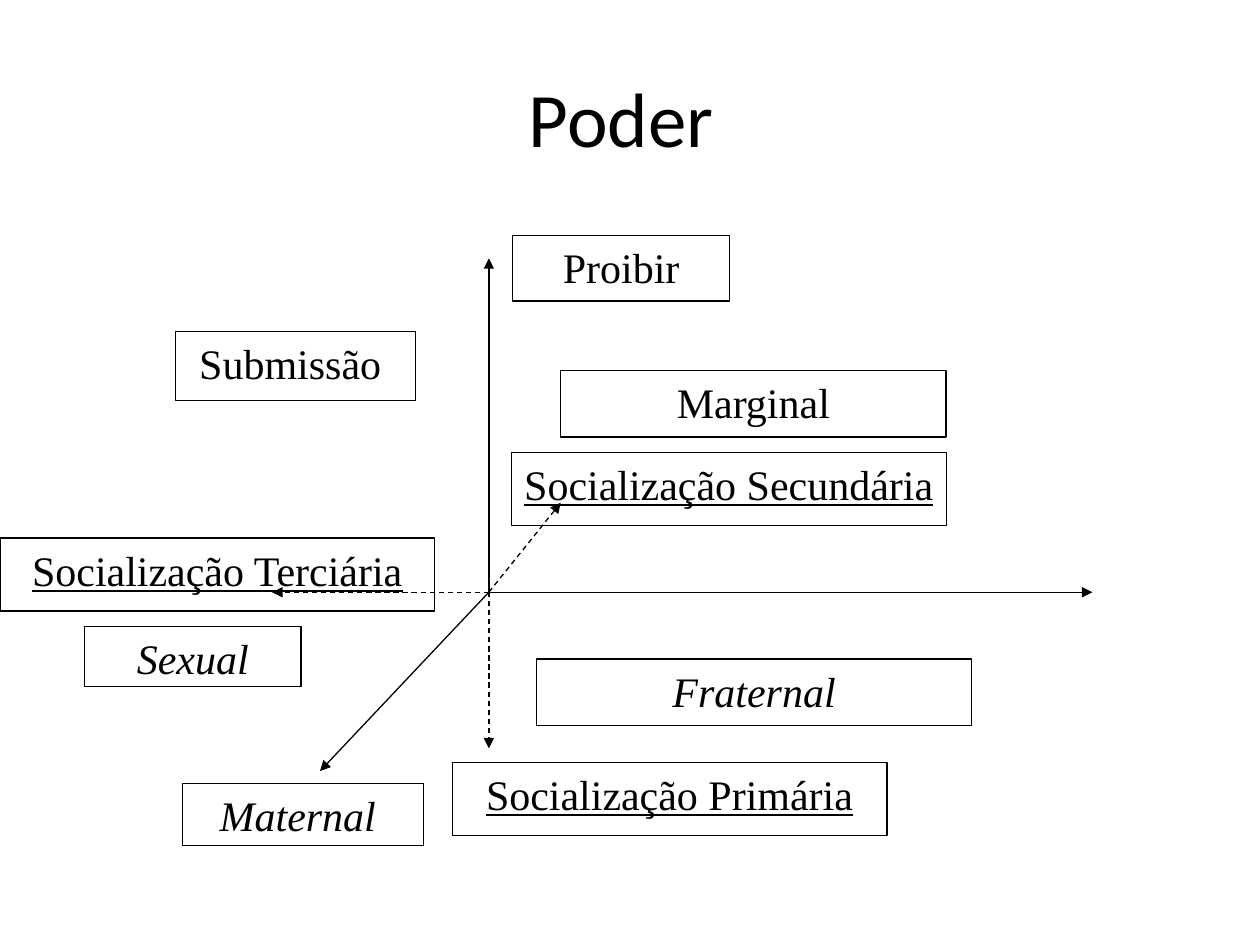
"""Build the "Poder" slide: six axes from one origin, with labelled boxes around them."""
from lxml.etree import SubElement
from pptx import Presentation
from pptx.dml.color import RGBColor
from pptx.enum.dml import MSO_LINE
from pptx.enum.shapes import MSO_CONNECTOR, MSO_SHAPE
from pptx.enum.text import MSO_ANCHOR, PP_ALIGN
from pptx.oxml.ns import qn
from pptx.util import Inches, Pt

BLACK = RGBColor(0, 0, 0)
WHITE = RGBColor(255, 255, 255)

deck = Presentation()
deck.slide_width, deck.slide_height = Inches(10), Inches(7.5)
COLUMN = deck.slide_width / 100
ROW = deck.slide_height / 75
slide = deck.slides.add_slide(deck.slide_layouts[6])


def cells(left, top, width, height):
    return [int(left * COLUMN), int(top * ROW), int(width * COLUMN), int(height * ROW)]


def write(holder, wording, font_name, size, anchor):
    frame = holder.text_frame
    frame.text = wording
    frame.word_wrap = False
    frame.vertical_anchor = anchor
    paragraph = frame.paragraphs[0]
    paragraph.alignment = PP_ALIGN.CENTER
    font = paragraph.runs[0].font
    font.name, font.size = font_name, Pt(size)
    font.color.rgb = BLACK
    return font


heading = slide.shapes.add_textbox(*cells(5, 3, 90, 12.5))
write(heading, "Poder ", "Calibri", 44, MSO_ANCHOR.MIDDLE)

origin = (38.8, 47)
axis_ends = [
    (38.8, 20.5, False),
    (25.4, 61.2, False),
    (86.7, 47, False),
    (38.8, 59.4, True),
    (21.6, 47, True),
    (44.5, 39.9, True),
]
for column, row, dashed in axis_ends:
    axis = slide.shapes.add_connector(MSO_CONNECTOR.STRAIGHT, *cells(*origin, column, row))
    axis.line.color.rgb = BLACK
    axis.line.width = Pt(0.75)
    if dashed:
        axis.line.dash_style = MSO_LINE.DASH
    SubElement(axis.line._get_or_add_ln(), qn("a:tailEnd"), type="triangle")
    SubElement(axis._element.spPr, qn("a:effectLst"))

positions = [
    ("Submissão ", 13.9, 26.3, 19.1, 5.5),
    ("Marginal", 44.5, 29.4, 30.6, 5.3),
    ("Proibir", 40.7, 18.7, 17.2, 5.2),
]
bonds = [
    ("Fraternal", 42.6, 52.3, 34.5, 5.3),
    ("Maternal ", 14.5, 62.2, 19.1, 4.9),
    ("Sexual", 6.7, 49.7, 17.2, 4.8),
]
socializations = [
    ("Socialização Terciária", 0, 42.7, 34.5, 5.8),
    ("Socialização Secundária", 40.6, 35.9, 34.5, 5.8),
    ("Socialização Primária", 35.9, 60.5, 34.5, 5.8),
]
see_through = {"Socialização Terciária", "Socialização Secundária"}

for group in (positions, bonds, socializations):
    for wording, *place in group:
        label = slide.shapes.add_shape(MSO_SHAPE.RECTANGLE, *cells(*place))
        label.shadow.inherit = False
        if wording in see_through:
            label.fill.background()
        else:
            label.fill.solid()
            label.fill.fore_color.rgb = WHITE
        label.line.color.rgb = BLACK
        label.line.width = Pt(0.75)
        font = write(label, wording, "Times New Roman", 24, MSO_ANCHOR.TOP)
        font.italic = group is bonds
        font.underline = group is socializations

deck.save("out.pptx")
